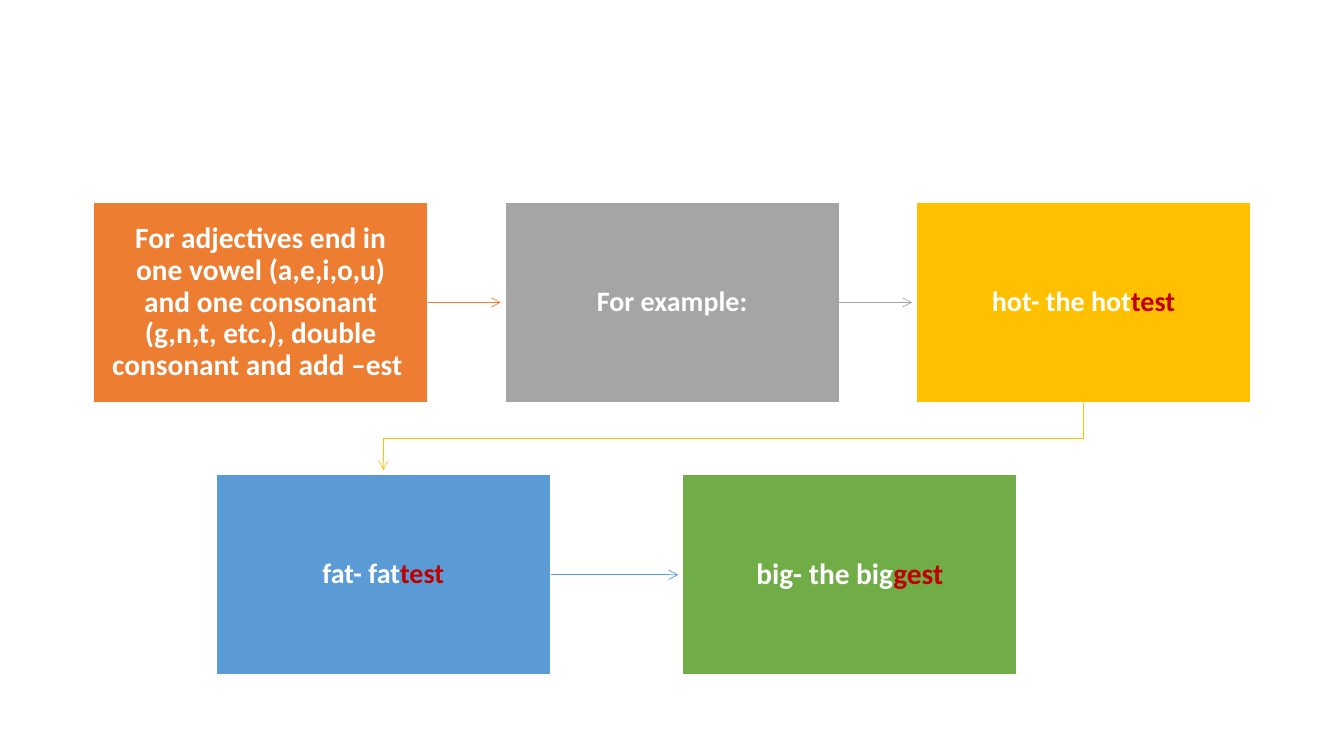
import pptx
import pptx.dml.color
import pptx.enum.shapes
import pptx.enum.text
import pptx.oxml.ns
import pptx.util
from lxml import etree

Pt = pptx.util.Pt

RULE = "For adjectives end in one vowel (a,e,i,o,u) and one consonant (g,n,t, etc.), double consonant and add –est "
ROWS = [
    {"left": 66.7, "top": 144.4, "pitch": 293.9, "boxes": [
        (RULE, "", 21, "ED7D31"),
        ("For example:", "", 20, "A5A5A5"),
        ("hot- the hot", "test", 20, "FFC000"),
    ]},
    {"left": 154.3, "top": 338.9, "pitch": 333.2, "boxes": [
        ("fat- fat", "test", 20, "5B9BD5"),
        ("big- the big", "gest", 21, "70AD47"),
    ]},
]
THEME = {"font": "Calibri", "text": "FFFFFF", "ending": "C00000", "border": "FFFFFF"}
BOX_W, BOX_H = 239, 143.3
ARROW_GAP = 3
INSET_X, INSET_Y = 13, 12.2


def rgb(value):
    return pptx.dml.color.RGBColor.from_string(value)


def add_run(p, text, size=20, color=THEME["text"], bold=True):
    r = p.add_run()
    r.text = text
    r.font.name = THEME["font"]
    r.font.size = Pt(size)
    r.font.bold = bold
    r.font.color.rgb = rgb(color)


def add_box(s, left, top, text, ending, size, color):
    sp = s.shapes.add_shape(pptx.enum.shapes.MSO_SHAPE.RECTANGLE, Pt(left), Pt(top), Pt(BOX_W), Pt(BOX_H))
    sp.shadow.inherit = False
    sp.fill.solid()
    sp.fill.fore_color.rgb = rgb(color)
    sp.line.color.rgb = rgb(THEME["border"])
    sp.line.width = Pt(1)
    tf = sp.text_frame
    tf.word_wrap = True
    tf.vertical_anchor = pptx.enum.text.MSO_ANCHOR.MIDDLE
    tf.margin_left = tf.margin_right = Pt(INSET_X)
    tf.margin_top = tf.margin_bottom = Pt(INSET_Y)
    p = tf.paragraphs[0]
    p.alignment = pptx.enum.text.PP_ALIGN.CENTER
    p.line_spacing = 0.9
    add_run(p, text, size=size)
    if ending:
        add_run(p, ending, size=size, color=THEME["ending"])


def style_arrow(sp, color):
    sp.line.color.rgb = rgb(color)
    sp.line.width = Pt(0.5)
    qn = pptx.oxml.ns.qn
    etree.SubElement(sp.line._get_or_add_ln(), qn("a:tailEnd"), type="arrow")
    etree.SubElement(sp._element.spPr, qn("a:effectLst"))


def add_straight_arrow(s, x1, x2, y, color):
    sp = s.shapes.add_connector(pptx.enum.shapes.MSO_CONNECTOR.STRAIGHT, Pt(x1), Pt(y), Pt(x2), Pt(y))
    style_arrow(sp, color)


def add_bent_arrow(s, x1, y1, x2, y2, color):
    middle = (y1 + y2 + ARROW_GAP) / 2
    builder = s.shapes.build_freeform(Pt(x1), Pt(y1))
    corners = [(x1, middle), (x2, middle), (x2, y2)]
    builder.add_line_segments([(Pt(x), Pt(y)) for x, y in corners], close=False)
    sp = builder.convert_to_shape()
    sp.fill.background()
    style_arrow(sp, color)


def main():
    prs = pptx.Presentation()
    prs.slide_width, prs.slide_height = Pt(960), Pt(540)
    s = prs.slides.add_slide(prs.slide_layouts[6])
    for row in ROWS:
        last = len(row["boxes"]) - 1
        for i, (text, ending, size, color) in enumerate(row["boxes"]):
            left = row["left"] + i * row["pitch"]
            add_box(s, left, row["top"], text, ending, size, color)
            if i < last:
                add_straight_arrow(s, left + BOX_W, left + row["pitch"] - ARROW_GAP,
                                   row["top"] + BOX_H / 2, color)
    upper, lower = ROWS
    end_column = len(upper["boxes"]) - 1
    add_bent_arrow(s, upper["left"] + end_column * upper["pitch"] + BOX_W / 2, upper["top"] + BOX_H,
                   lower["left"] + BOX_W / 2, lower["top"] - ARROW_GAP, upper["boxes"][-1][3])
    prs.save("out.pptx")


if __name__ == "__main__":
    main()
